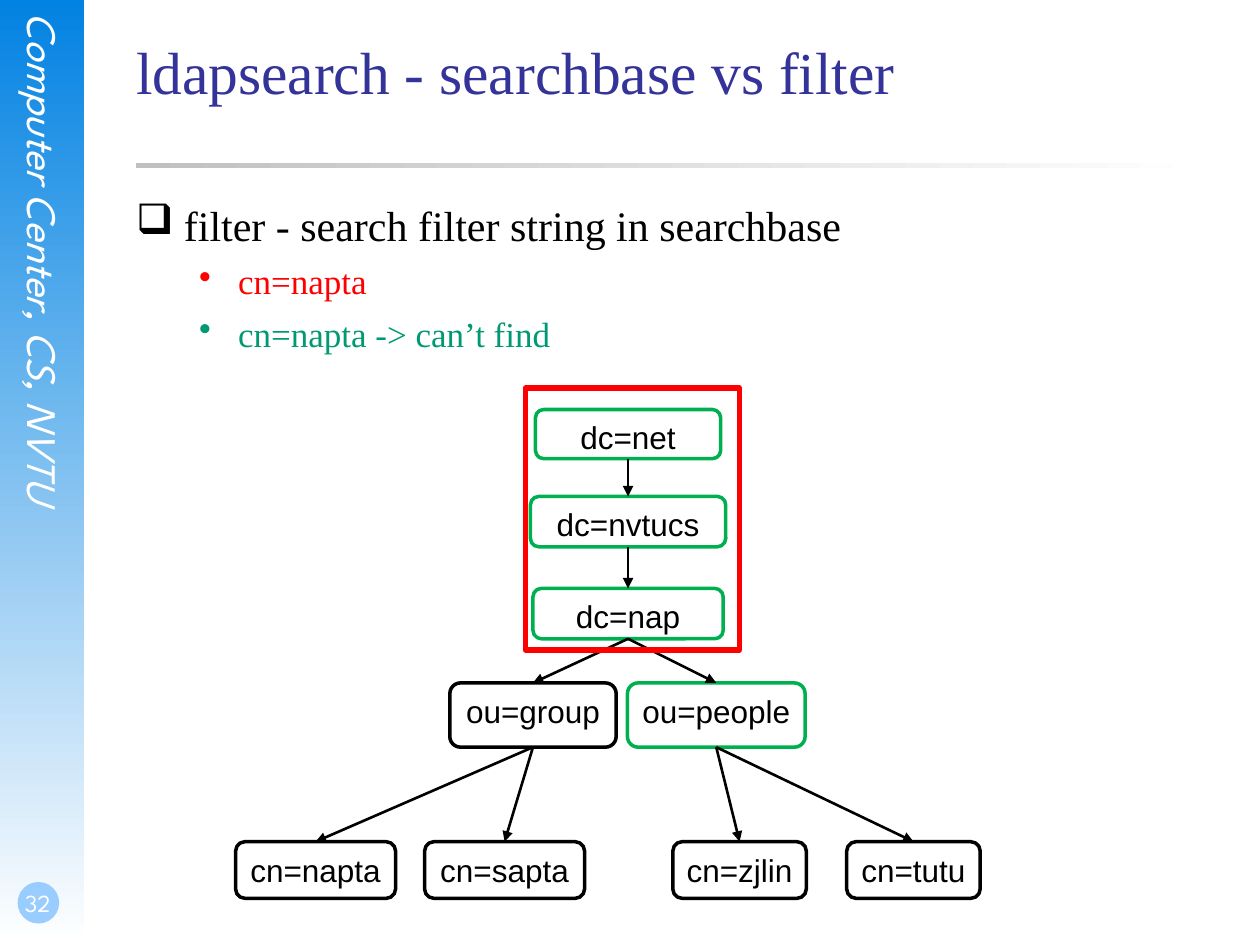
from dataclasses import dataclass

from lxml import etree
from pptx import Presentation
from pptx.dml.color import RGBColor
from pptx.enum.shapes import MSO_CONNECTOR, MSO_SHAPE
from pptx.enum.text import MSO_ANCHOR, PP_ALIGN
from pptx.oxml.ns import qn
from pptx.util import Inches, Pt


@dataclass(frozen=True)
class Theme:
    """Colours, fonts and sizes of the slide."""
    white: str = "FFFFFF"
    black: str = "000000"
    blue: str = "0282E2"
    badge: str = "99CCFF"
    rule: str = "C0C0C0"
    title: str = "333399"
    red: str = "FF0000"
    teal: str = "009973"
    green: str = "00B050"
    serif: str = "Times New Roman"
    sans: str = "Arial"
    side: str = "League Spartan"
    title_size: int = 34
    heading_size: int = 24
    item_size: int = 20
    node_size: int = 18
    number_size: int = 14


THEME = Theme()
TOP, BOTTOM = 0, 2
NODES = {
    "dc=net": (4.25, 3.25, 1.47, 0.39, THEME.green),
    "dc=nvtucs": (4.21, 3.94, 1.55, 0.4, THEME.green),
    "dc=nap": (4.23, 4.67, 1.51, 0.4, THEME.green),
    "ou=group": (3.57, 5.42, 1.32, 0.51, THEME.black),
    "ou=people": (4.98, 5.42, 1.41, 0.51, THEME.green),
    "cn=napta": (1.87, 6.68, 1.27, 0.45, THEME.black),
    "cn=sapta": (3.37, 6.68, 1.27, 0.45, THEME.black),
    "cn=zjlin": (5.34, 6.68, 1.06, 0.45, THEME.black),
    "cn=tutu": (6.72, 6.68, 1.06, 0.45, THEME.black),
}
CHILDREN = {
    "dc=net": ["dc=nvtucs"],
    "dc=nvtucs": ["dc=nap"],
    "dc=nap": ["ou=group", "ou=people"],
    "ou=group": ["cn=napta", "cn=sapta"],
    "ou=people": ["cn=zjlin", "cn=tutu"],
}


def to_inches(box):
    """Turn a box of numbers into lengths."""
    return [Inches(value) for value in box]


def format_paragraph(paragraph, font, size, color, italic=False):
    """Format every run of a paragraph."""
    for run in paragraph.runs:
        run.font.name = font
        run.font.size = Pt(size)
        run.font.italic = italic
        run.font.color.rgb = RGBColor.from_string(color)


def set_margins(text_frame, left=0, bottom=0):
    """Set the insets of a text frame; right and top are zero."""
    text_frame.margin_left = Inches(left)
    text_frame.margin_bottom = Inches(bottom)
    text_frame.margin_right = text_frame.margin_top = 0


def add_text(slide, box):
    """Add a wrapping text box without insets."""
    shape = slide.shapes.add_textbox(*to_inches(box))
    shape.text_frame.word_wrap = True
    set_margins(shape.text_frame)
    return shape


def add_block(slide, kind, box, fill=None, line=None, width=2):
    """Add a preset shape with a plain fill and line."""
    shape = slide.shapes.add_shape(kind, *to_inches(box))
    shape.shadow.inherit = False
    if fill:
        shape.fill.solid()
        shape.fill.fore_color.rgb = RGBColor.from_string(fill)
    else:
        shape.fill.background()
    if line:
        shape.line.color.rgb = RGBColor.from_string(line)
        shape.line.width = Pt(width)
    else:
        shape.line.fill.background()
    return shape


def add_gradient(slide, box, start, angle):
    """Add a rectangle that fades to white."""
    shape = add_block(slide, MSO_SHAPE.RECTANGLE, box)
    shape.fill.gradient()
    shape.fill.gradient_angle = angle
    for stop, color in zip(shape.fill.gradient_stops, (start, THEME.white)):
        stop.color.rgb = RGBColor.from_string(color)


def add_sidebar(slide, box):
    """Place the side band with its vertical name and page number."""
    left, top, width, height = box
    add_gradient(slide, box, THEME.blue, 270)
    name = add_text(slide, (left + 0.15, top + 0.1, 0.4, 5.11))
    name.element.txBody.bodyPr.set("vert", "eaVert")
    name.text_frame.text = "Computer Center, CS, NVTU"
    format_paragraph(name.text_frame.paragraphs[0], THEME.side,
                     THEME.heading_size, THEME.white, italic=True)
    add_block(slide, MSO_SHAPE.OVAL,
              (left + 0.14, top + height - 0.5, 0.33, 0.33), THEME.badge)
    number = add_text(slide, (left, top + height - 0.67, 0.58, 0.5)).text_frame
    set_margins(number, 0.02, 0.05)
    number.vertical_anchor = MSO_ANCHOR.BOTTOM
    number.text = "32"
    number.paragraphs[0].alignment = PP_ALIGN.CENTER
    format_paragraph(number.paragraphs[0], THEME.side, THEME.number_size, THEME.white)


def add_title(slide, box):
    """Place the title and the rule below it."""
    left, top, width, height = box
    add_gradient(slide, (left, top + 1.01, width, 0.04), THEME.rule, 0)
    title = slide.shapes.title
    title.left, title.top, title.width, title.height = to_inches(box)
    text_frame = title.text_frame
    set_margins(text_frame)
    text_frame.vertical_anchor = MSO_ANCHOR.TOP
    text_frame.text = "ldapsearch - searchbase vs filter"
    text_frame.paragraphs[0].alignment = PP_ALIGN.LEFT
    format_paragraph(text_frame.paragraphs[0], THEME.serif, THEME.title_size, THEME.title)


def add_bullets(slide, box):
    """Place the heading and its two items."""
    items = [
        ("filter - search filter string in searchbase", 0, THEME.black),
        ("cn=napta", 1, THEME.red),
        ("cn=napta -> can’t find", 1, THEME.teal),
    ]
    levels = [("❑", 0.38, 0.38, THEME.heading_size), ("•", 0.81, 0.31, THEME.item_size)]
    text_frame = add_text(slide, box).text_frame
    text_frame.text = "\n".join(text for text, _, _ in items)
    for paragraph, (_, level, color) in zip(text_frame.paragraphs, items):
        bullet, margin, hanging, size = levels[level]
        paragraph.level = level
        paragraph.space_before = Pt(6)
        format_paragraph(paragraph, THEME.serif, size, color)
        properties = paragraph._p.get_or_add_pPr()
        properties.set("marL", str(Inches(margin)))
        properties.set("indent", str(-Inches(hanging)))
        etree.SubElement(properties, qn("a:buChar")).set("char", bullet)


def add_node(slide, label, box, color):
    """Add one labelled entry of the directory tree."""
    shape = add_block(slide, MSO_SHAPE.ROUNDED_RECTANGLE, box, THEME.white, color)
    text_frame = shape.text_frame
    text_frame.word_wrap = False
    text_frame.vertical_anchor = MSO_ANCHOR.TOP
    text_frame.text = label
    text_frame.paragraphs[0].alignment = PP_ALIGN.CENTER
    format_paragraph(text_frame.paragraphs[0], THEME.sans, THEME.node_size, THEME.black)
    return shape


def add_arrow(slide, parent, child):
    """Join the bottom of a parent to the top of its child."""
    arrow = slide.shapes.add_connector(MSO_CONNECTOR.STRAIGHT, 0, 0, 0, 0)
    arrow.begin_connect(parent, BOTTOM)
    arrow.end_connect(child, TOP)
    arrow.line.color.rgb = RGBColor.from_string(THEME.black)
    arrow.line.width = Pt(1.5)
    etree.SubElement(arrow.line._get_or_add_ln(), qn("a:tailEnd")).set("type", "triangle")
    etree.SubElement(arrow.element.spPr, qn("a:effectLst"))


def add_tree(slide, frame_box):
    """Place the directory tree and the frame round its search base."""
    left, top = frame_box[:2]
    shapes = {}
    for label, (x, y, width, height, color) in NODES.items():
        box = (left + x - 4.17, top + y - 3.08, width, height)
        shapes[label] = add_node(slide, label, box, color)
    for parent, children in CHILDREN.items():
        for child in children:
            add_arrow(slide, shapes[parent], shapes[child])
    add_block(slide, MSO_SHAPE.RECTANGLE, frame_box, line=THEME.red, width=3)


def main():
    """Build and save the slide."""
    presentation = Presentation()
    presentation.slide_width, presentation.slide_height = Inches(10), Inches(7.5)
    slide = presentation.slides.add_slide(presentation.slide_layouts[5])
    add_sidebar(slide, (0, 0, 0.67, 7.5))
    add_title(slide, (1.08, 0.28, 8.5, 1.25))
    add_bullets(slide, (1.08, 1.58, 8.5, 1.4))
    add_tree(slide, (4.17, 3.08, 1.7, 2.08))
    presentation.save("out.pptx")


if __name__ == "__main__":
    main()
